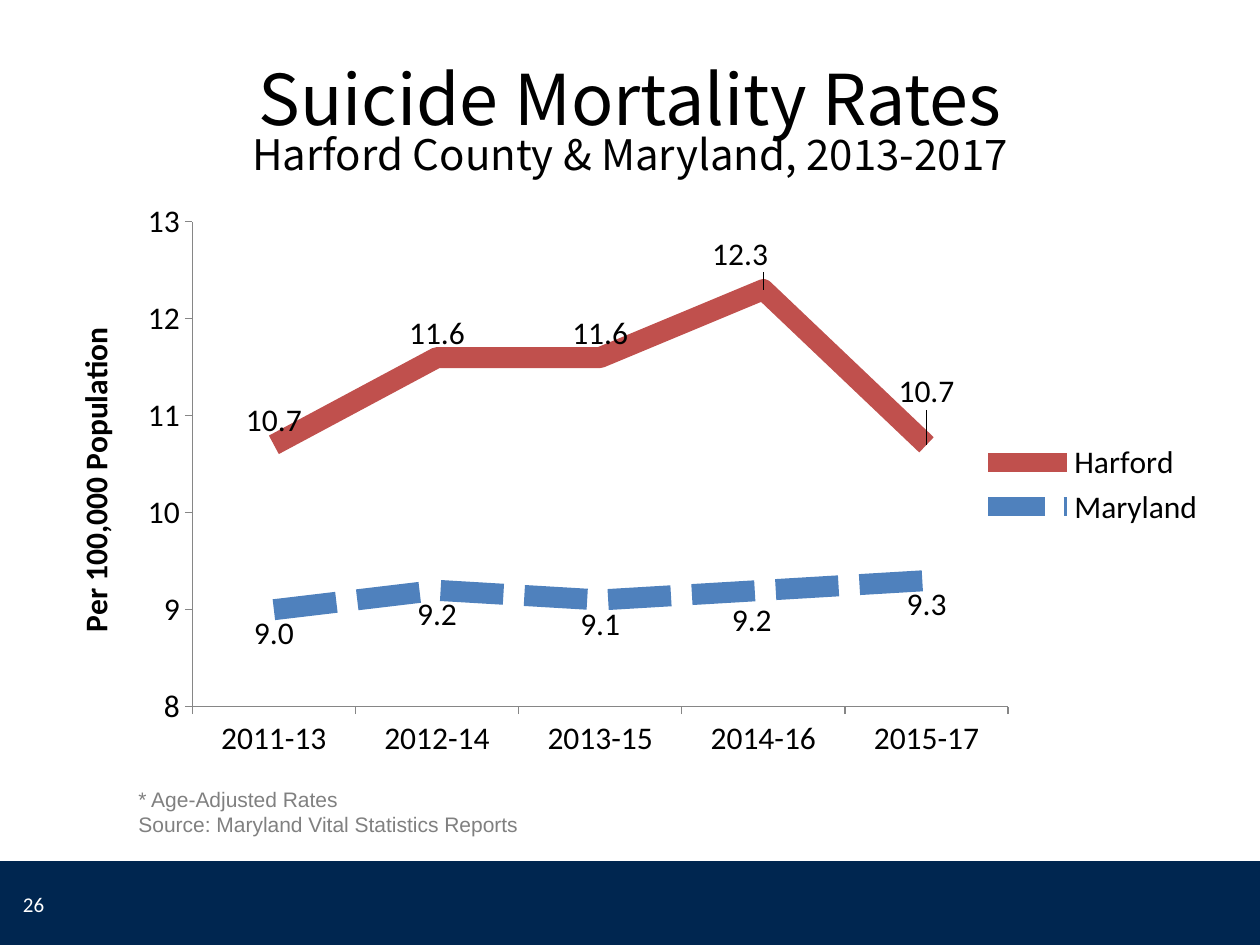
from lxml import etree
from pptx import Presentation
from pptx.chart.data import CategoryChartData
from pptx.dml.color import RGBColor
from pptx.enum.chart import XL_CHART_TYPE, XL_LABEL_POSITION, XL_LEGEND_POSITION, XL_MARKER_STYLE, XL_TICK_MARK
from pptx.enum.dml import MSO_LINE
from pptx.enum.shapes import MSO_SHAPE
from pptx.enum.text import MSO_ANCHOR, PP_ALIGN
from pptx.oxml.ns import qn
from pptx.util import Pt

LINE = XL_CHART_TYPE.LINE
ABOVE, BELOW = XL_LABEL_POSITION.ABOVE, XL_LABEL_POSITION.BELOW
RIGHT = XL_LEGEND_POSITION.RIGHT
BARE = XL_MARKER_STYLE.NONE
OUT = XL_TICK_MARK.OUTSIDE
SOLID, DASH = MSO_LINE.SOLID, MSO_LINE.SQUARE_DOT
RECT = MSO_SHAPE.RECTANGLE
MIDDLE, TOP = MSO_ANCHOR.MIDDLE, MSO_ANCHOR.TOP
LEFT, CENTER = PP_ALIGN.LEFT, PP_ALIGN.CENTER

THEME = {
    "navy": RGBColor(0x00, 0x26, 0x50),
    "red": RGBColor(0xC0, 0x50, 0x4D),
    "blue": RGBColor(0x4F, 0x81, 0xBD),
    "black": RGBColor(0, 0, 0),
    "white": RGBColor(255, 255, 255),
    "gray": RGBColor(0x80, 0x80, 0x80),
    "axis": RGBColor(0x86, 0x86, 0x86),
    "head": 40,
    "sub": 24,
    "chart": 18,
    "note": 12,
    "title": "Noto Sans CJK SC",
    "body": "Calibri",
    "plain": "Arial",
}


def write(text, frame, face, sizes, color, align=LEFT, anchor=TOP, bold=False, space=None, joined=False):
    frame.word_wrap = True
    frame.vertical_anchor = anchor
    for i, (line, size) in enumerate(zip(text.split("\n"), sizes)):
        para = frame.paragraphs[0]
        if i and joined:
            para.add_line_break()
        elif i:
            para = frame.add_paragraph()
        para.alignment = align
        para.line_spacing = space
        run = para.add_run()
        run.text = line
        font = run.font
        font.name, font.size, font.bold = THEME[face], Pt(THEME[size]), bold
        font.color.rgb = THEME[color]


def place(parent, spot, **values):
    for old in parent.findall(qn("c:layout")):
        parent.remove(old)
    layout = etree.Element(qn("c:layout"))
    manual = etree.SubElement(layout, qn("c:manualLayout"))
    for name, value in values.items():
        etree.SubElement(manual, qn("c:" + name)).set("val", str(value))
    parent.insert(spot, layout)


deck = Presentation()
deck.slide_width, deck.slide_height = Pt(720), Pt(540)
slide = deck.slides.add_slide(deck.slide_layouts[5])
shapes = slide.shapes

band = shapes.add_shape(RECT, Pt(0), Pt(492), Pt(720), Pt(48))
band.shadow.inherit = False
band.fill.solid()
band.fill.fore_color.rgb = THEME["navy"]
band.line.fill.background()

title = shapes.title
title.left, title.top, title.width, title.height = Pt(36), Pt(34.5), Pt(648), Pt(74)
frame = title.text_frame
frame.margin_top = frame.margin_bottom = Pt(0)
write("Suicide Mortality Rates\nHarford County & Maryland, 2013-2017", frame, "title",
      ["head", "sub"], "black", align=CENTER, anchor=MIDDLE, space=0.8, joined=True)

page = shapes.add_textbox(Pt(6), Pt(502), Pt(168), Pt(29))
write("26", page.text_frame, "body", ["note"], "white", anchor=MIDDLE)

data = CategoryChartData(number_format="0.0")
data.categories = ["2011-13", "2012-14", "2013-15", "2014-16", "2015-17"]
data.add_series("Harford", [10.7, 11.6, 11.6, 12.3, 10.7])
data.add_series("Maryland", [9, 9.2, 9.1, 9.2, 9.3])
chart = shapes.add_chart(LINE, Pt(30), Pt(110), Pt(666), Pt(334), data).chart
chart.has_title = False
chart.font.name, chart.font.size = THEME["body"], Pt(THEME["chart"])
chart.font.color.rgb = THEME["black"]
chart.has_legend = True
chart.legend.position = RIGHT
chart.legend.include_in_layout = False
plot = chart.plots[0]
plot.vary_by_categories = False
place(chart.element.find(".//" + qn("c:plotArea")), 0, layoutTarget="inner",
      xMode="edge", yMode="edge", x=0.12, y=0.05, w=0.7, h=0.83)

rates, years = chart.value_axis, chart.category_axis
for axis in (rates, years):
    axis.has_major_gridlines = False
    axis.major_tick_mark = OUT
    axis.format.line.color.rgb = THEME["axis"]
    axis.format.line.width = Pt(0.75)
rates.minimum_scale, rates.maximum_scale, rates.major_unit = 8, 13, 1
rates.tick_labels.number_format = "0"
rates.tick_labels.number_format_is_linked = False
write("Per 100,000 Population", rates.axis_title.text_frame, "body", ["chart"], "black",
      align=CENTER, bold=True)

styles = [
    ("red", SOLID, ABOVE, {3: (-0.02, -0.02), 4: (0, -0.05)}),
    ("blue", DASH, BELOW, {3: (-0.01, 0.01)}),
]
for series, (color, dash, side, shifts) in zip(plot.series, styles):
    series.smooth = False
    series.marker.style = BARE
    line = series.format.line
    line.color.rgb, line.width, line.dash_style = THEME[color], Pt(12), dash
    labels = series.data_labels
    labels.show_value = True
    labels.position = side
    labels.number_format, labels.number_format_is_linked = "0.0", False
    for index, (x, y) in shifts.items():
        label = series.points[index].data_label
        label.position = side
        label.font.size = Pt(THEME["chart"])
        tag = labels._element.find(f'{qn("c:dLbl")}[{qn("c:idx")}][last()]')
        place(tag, 1, x=x, y=y)

note = shapes.add_textbox(Pt(72), Pt(446), Pt(276), Pt(36))
write("* Age-Adjusted Rates\nSource: Maryland Vital Statistics Reports", note.text_frame,
      "plain", ["note", "note"], "gray")

deck.save("out.pptx")
